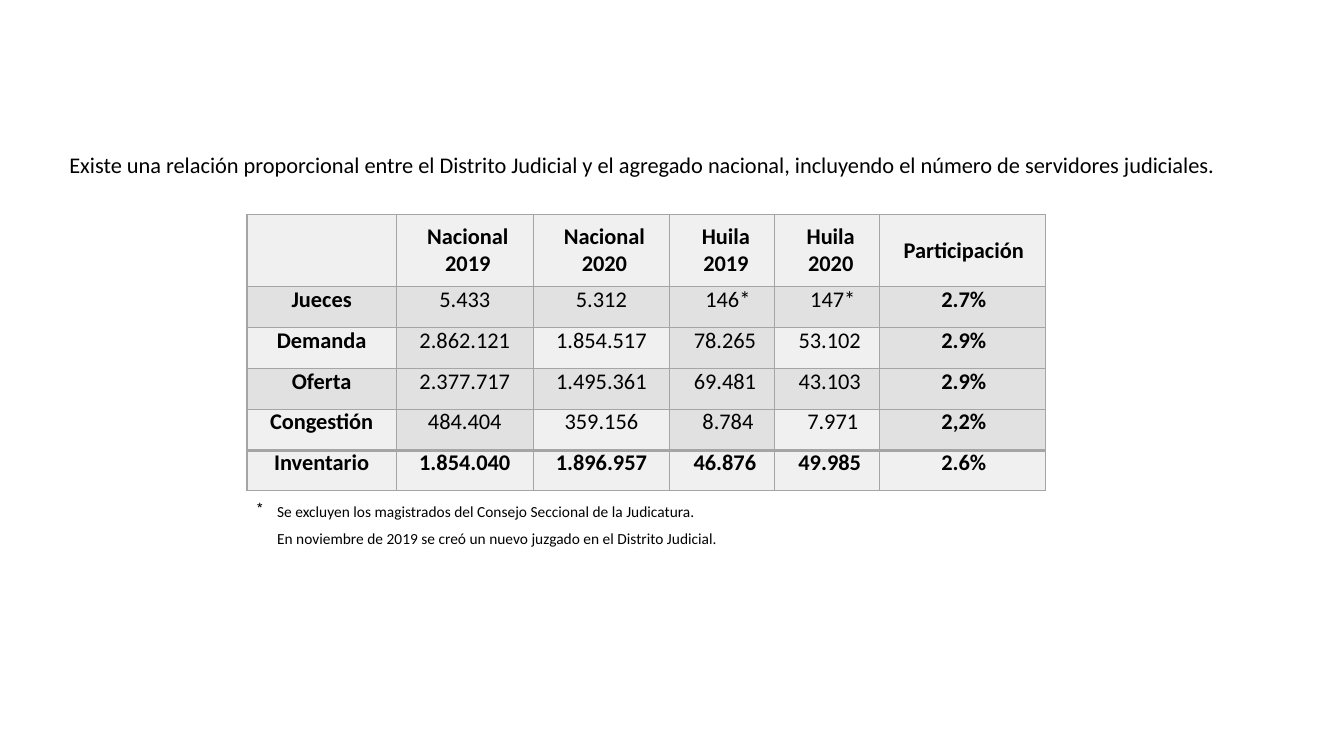
from lxml.etree import SubElement
from pptx import Presentation
from pptx.dml.color import RGBColor
from pptx.enum.text import MSO_ANCHOR, MSO_AUTO_SIZE, PP_ALIGN
from pptx.oxml.ns import qn
from pptx.util import Inches, Pt

COLORS = {"text": "000000", "border": "A5A5A5", "light": "F0F0F0", "dark": "E1E1E1"}
FONT = "Calibri"

prs = Presentation()
prs.slide_width, prs.slide_height = Inches(13.33), Inches(7.5)
s = prs.slides.add_slide(prs.slide_layouts[6])


def add_line(tf, text, size, left=0, hang=0, bullet=None, bold=False, **formats):
    """Fill the empty first paragraph of tf, or add one after the last."""
    p = tf.paragraphs[0] if not tf.text else tf.add_paragraph()
    pPr = p._p.get_or_add_pPr()
    pPr.set("marL", str(Inches(left)))
    pPr.set("indent", str(Inches(-hang)))
    if bullet:
        SubElement(pPr, qn("a:buChar")).set("char", bullet)
    for name, value in formats.items():
        setattr(p, name, value)
    r = p.add_run()
    r.text = text
    r.font.name, r.font.size, r.font.bold = FONT, Pt(size), bold
    r.font.color.rgb = RGBColor.from_string(COLORS["text"])


def add_box(left, top, width, height):
    tf = s.shapes.add_textbox(*map(Inches, (left, top, width, height))).text_frame
    tf.word_wrap = True
    tf.auto_size = MSO_AUTO_SIZE.SHAPE_TO_FIT_TEXT
    return tf


# Introduction
tf = add_box(0.36, 1.45, 12.62, 0.37)
add_line(tf, "Existe una relación proporcional entre el Distrito Judicial y el agregado "
         "nacional, incluyendo el número de servidores judiciales.",
         16, left=0.43, hang=0.2, alignment=PP_ALIGN.JUSTIFY)

# Table: L and D give the light or dark fill of each cell
rows = [
    (["", "Nacional\n2019", "Nacional\n2020", "Huila\n2019", "Huila\n2020", "Participación"],
     "LLLLLL"),
    (["Jueces", "5.433", "5.312", "146*", "147*", "2.7%"], "DDDDDD"),
    (["Demanda", "2.862.121", "1.854.517", "78.265", "53.102", "2.9%"], "LDLDLD"),
    (["Oferta", "2.377.717", "1.495.361", "69.481", "43.103", "2.9%"], "DDDDDD"),
    (["Congestión", "484.404", "359.156", "8.784", "7.971", "2,2%"], "LDLDLD"),
    (["Inventario", "1.854.040", "1.896.957", "46.876", "49.985", "2.6%"], "LLLLLL"),
]
col_widths = [1.48, 1.36, 1.35, 1.04, 1.04, 1.65]
row_heights = [0.71, 0.41, 0.41, 0.4, 0.41, 0.4]
header_indents = [0, 0.06, 0.06, 0.08, 0.08, 0.03]
huila_indents = [0, 0.12, 0.06, 0.06, 0.12, 0.06]
fills = {"L": COLORS["light"], "D": COLORS["dark"]}
last_row, last_col = len(rows) - 1, len(col_widths) - 1

table = s.shapes.add_table(len(rows), len(col_widths), Inches(2.45), Inches(2.13),
                           Inches(sum(col_widths)), Inches(sum(row_heights))).table
for column, width in zip(table.columns, col_widths):
    column.width = Inches(width)

for i, (texts, shades) in enumerate(rows):
    table.rows[i].height = Inches(row_heights[i])
    for j, (text, shade) in enumerate(zip(texts, shades)):
        cell = table.cell(i, j)
        cell.vertical_anchor = MSO_ANCHOR.MIDDLE
        for side in ("left", "right", "top", "bottom"):
            setattr(cell, f"margin_{side}", 0)

        tcPr = cell._tc.get_or_add_tcPr()
        for side in "LRTB":
            thick = (i, side) in [(last_row, "T"), (last_row - 1, "B")]
            ln = SubElement(tcPr, qn(f"a:ln{side}"), w=str(Pt(2 if thick else 1)))
            SubElement(SubElement(ln, qn("a:solidFill")), qn("a:srgbClr"),
                       val=COLORS["border"])
        cell.fill.solid()
        cell.fill.fore_color.rgb = RGBColor.from_string(fills[shade])

        if i == 0:
            indent, formats = header_indents[j], {}
        else:
            indent = {3: huila_indents[i], 4: huila_indents[i], last_col: 0.03}.get(j, 0)
            formats = {"line_spacing": Pt(8.8)}
        bold = i in (0, last_row) or j in (0, last_col)
        for line in text.splitlines():
            add_line(cell.text_frame, line, 16, left=indent, bold=bold,
                     alignment=PP_ALIGN.CENTER, **formats)

# Footnote
tf = add_box(2.45, 4.93, 6.87, 0.56)
add_line(tf, "Se excluyen los magistrados del Consejo Seccional de la Judicatura.",
         11, left=0.2, hang=0.2, bullet="*")
add_line(tf, "En noviembre de 2019 se creó un nuevo juzgado en el Distrito Judicial.",
         11, left=0.2, space_before=Pt(6))

prs.save("out.pptx")
